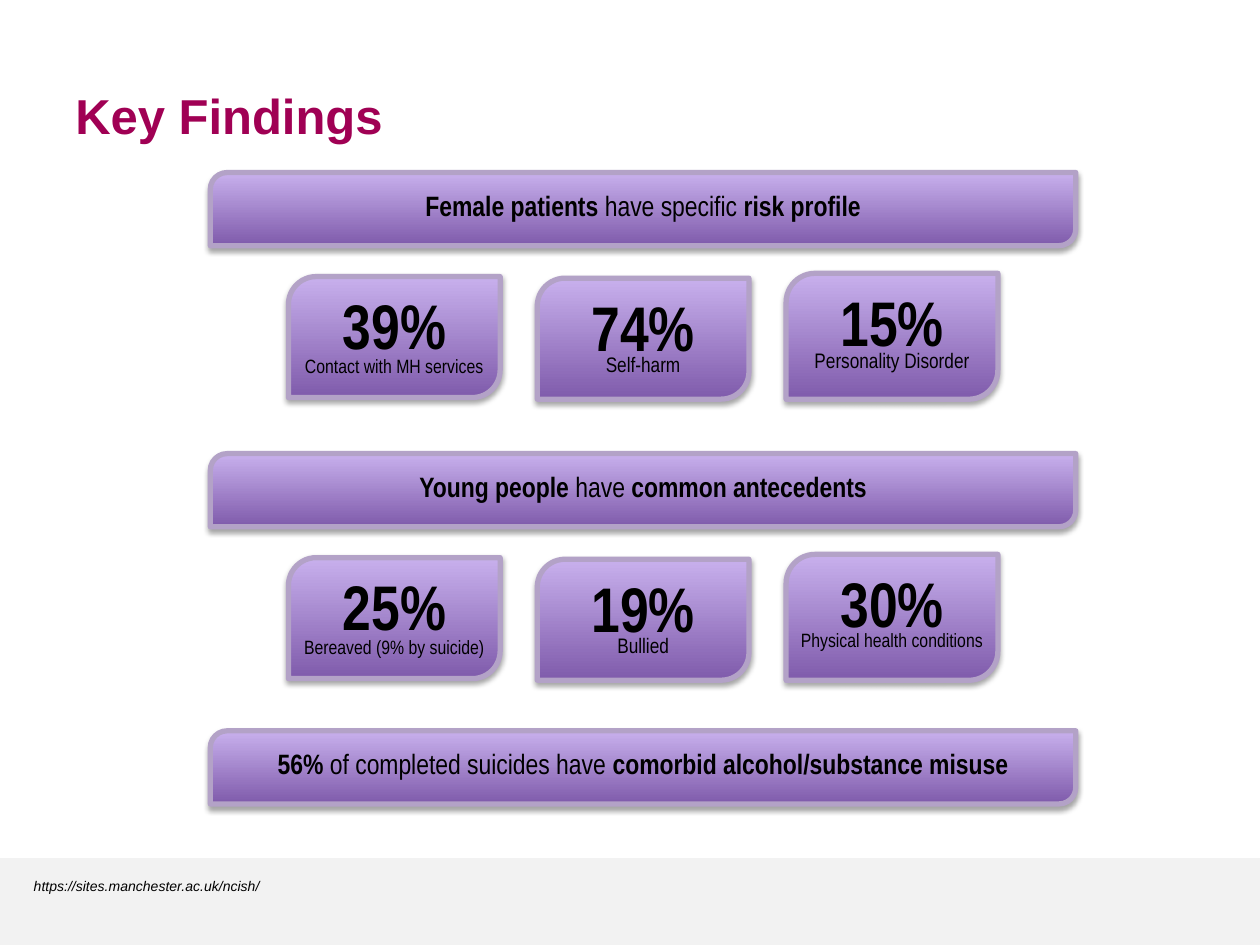
from lxml import etree
from pptx import Presentation
from pptx.dml.color import RGBColor
from pptx.enum.shapes import MSO_SHAPE
from pptx.enum.text import MSO_ANCHOR, PP_ALIGN
from pptx.oxml.ns import qn
from pptx.util import Pt

PANEL = MSO_SHAPE.ROUND_2_DIAG_RECTANGLE
RECTANGLE = MSO_SHAPE.RECTANGLE
TOP, MIDDLE = MSO_ANCHOR.TOP, MSO_ANCHOR.MIDDLE
LEFT, CENTER = PP_ALIGN.LEFT, PP_ALIGN.CENTER

COLORS = {
    "title": "A00054", "text": "000000", "footer": "F2F2F2",
    "dark": "7F5BAB", "light": "C8B0ED", "edge": "B3A2C7", "shadow": "000000",
}
SANS, NARROW = "Arial", "Arial Narrow"

BAR_LEFT, BAR_WIDTH, BAR_HEIGHT = 120.2, 494.6, 41.8
CARD_INDENT, CARD_PITCH, CARD_WIDTH = 44.6, 142.2, 121
# Per column: drop below the bar's top, height, drop of the label in the card
CARD_COLUMNS = [(59.5, 69.1, 40.7), (60.4, 69.1, 38.4), (57.6, 72, 38.6)]

# Bar top, bar text as (words, bold), cards as (share, label, label size)
SECTIONS = [
    (98.6,
     [("Female patients ", True), ("have specific ", False), ("risk profile", True)],
     [("39%", "Contact with MH services", 11), ("74%", "Self-harm", 12),
      ("15%", "Personality Disorder", 12)]),
    (259.2,
     [("Young people ", True), ("have", False), (" common antecedents", True)],
     [("25%", "Bereaved (9% by suicide)", 11), ("19%", "Bullied", 12),
      ("30%", "Physical health conditions", 11)]),
    (417.6,
     [("56% ", True), ("of completed suicides have", False),
      (" comorbid alcohol/substance misuse", True)],
     []),
]


def color(name):
    return RGBColor.from_string(COLORS[name])


def add_text(page, box, runs, size, font=NARROW, align=CENTER, anchor=MIDDLE,
             tint="text", italic=False):
    """Write runs of (words, bold) as one paragraph and return its frame."""
    frame = page.shapes.add_textbox(*map(Pt, box)).text_frame
    frame.word_wrap = True
    frame.vertical_anchor = anchor
    para = frame.paragraphs[0]
    para.alignment = align
    for words, bold in runs:
        span = para.add_run()
        span.text = words
        span.font.name = font
        span.font.size = Pt(size)
        span.font.bold = bold
        span.font.italic = italic
        span.font.color.rgb = color(tint)
    return frame


def add_shadow(shape):
    shape.shadow.inherit = False
    effects = shape._element.spPr.find(qn("a:effectLst"))
    shadow = etree.SubElement(effects, qn("a:outerShdw"), blurRad=str(Pt(3.1)),
                              dist=str(Pt(1.8)), dir="5400000", rotWithShape="0")
    tone = etree.SubElement(shadow, qn("a:srgbClr"), val=COLORS["shadow"])
    etree.SubElement(tone, qn("a:alpha"), val="35000")


def add_panel(page, box):
    panel = page.shapes.add_shape(PANEL, *map(Pt, box))
    panel.adjustments[0] = 0.23
    panel.adjustments[1] = 0
    panel.fill.gradient()
    panel.fill.gradient_angle = 90
    for stop, name in zip(panel.fill.gradient_stops, ("dark", "light")):
        stop.color.rgb = color(name)
    panel.line.color.rgb = color("edge")
    panel.line.width = Pt(3)
    add_shadow(panel)


def add_bar(page, box, runs):
    left, top, width, _ = box
    add_panel(page, box)
    add_text(page, (left, top + 5, width, 27.4), runs, 16)


def add_card(page, box, label_drop, share, label, label_size):
    left, top, width, _ = box
    add_panel(page, box)
    add_text(page, (left, top + label_drop, width, 23.8), [(label, False)],
             label_size, anchor=TOP)
    add_text(page, (left, top + 1, width, 52.6), [(share, True)], 36)


def add_section(page, left, top, runs, cards):
    add_bar(page, (left, top, BAR_WIDTH, BAR_HEIGHT), runs)
    for column, (card, layout) in enumerate(zip(cards, CARD_COLUMNS)):
        drop, height, label_drop = layout
        card_left = left + CARD_INDENT + column * CARD_PITCH
        add_card(page, (card_left, top + drop, CARD_WIDTH, height), label_drop, *card)


def add_title(page, box):
    frame = add_text(page, box, [("Key Findings", True)], 28, SANS, LEFT, TOP, "title")
    frame.margin_top = Pt(7)


def add_footer(page, box):
    left, top, _, _ = box
    band = page.shapes.add_shape(RECTANGLE, *map(Pt, box))
    band.fill.solid()
    band.fill.fore_color.rgb = color("footer")
    band.line.fill.background()
    band.shadow.inherit = False
    add_text(page, (left + 12.2, top + 7.5, 602, 17),
             [("https://sites.manchester.ac.uk/ncish/", False)],
             8, SANS, LEFT, italic=True)


def main():
    deck = Presentation()
    deck.slide_width, deck.slide_height = Pt(720), Pt(540)
    page = deck.slides.add_slide(deck.slide_layouts[6])
    add_footer(page, (0, 490.3, 720, 49.7))
    add_title(page, (36, 41.8, 648, 59.8))
    for top, runs, cards in SECTIONS:
        add_section(page, BAR_LEFT, top, runs, cards)
    deck.save("out.pptx")


if __name__ == "__main__":
    main()
